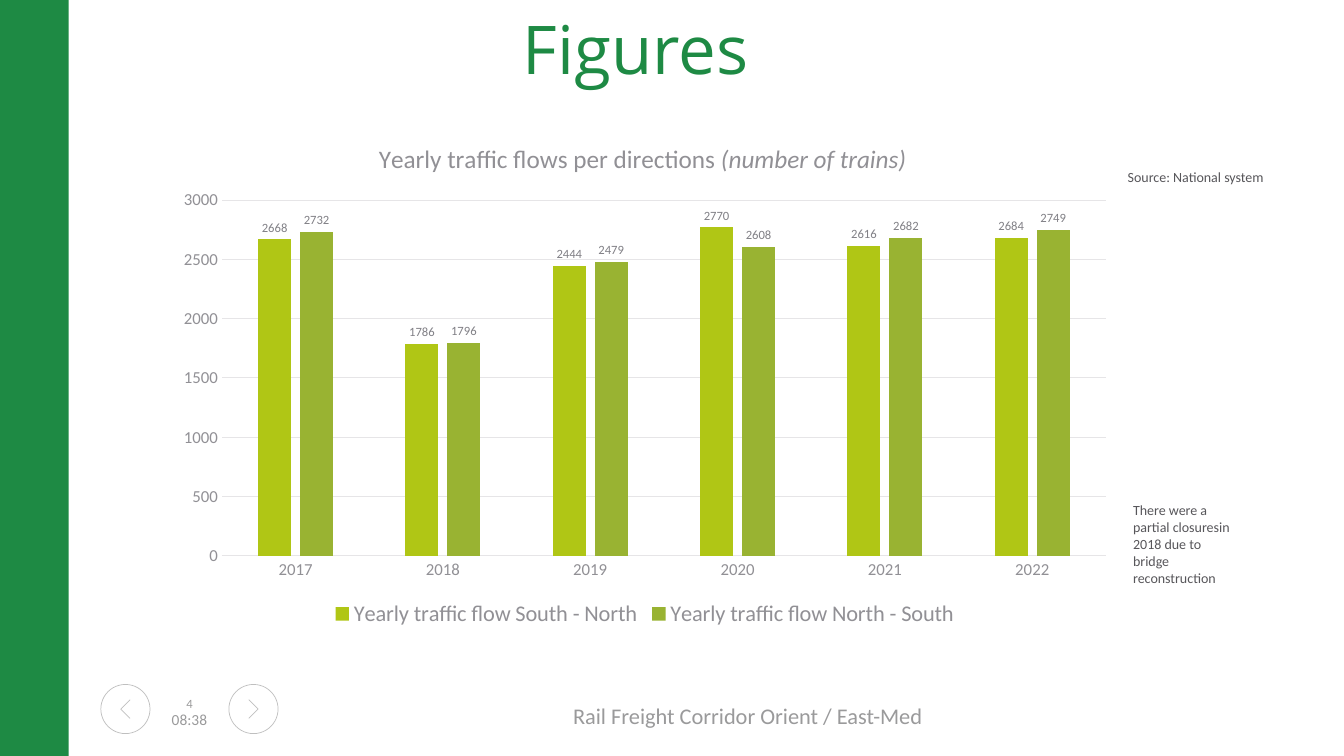
import pptx
import pptx.chart.data
import pptx.dml.color
import pptx.enum.chart
import pptx.enum.shapes
import pptx.enum.text
import pptx.oxml
import pptx.util

GREEN, GREY, INK, AXIS, GRID, OUTLINE = "1E8A44", "9A9A9B", "57565A", "919095", "E6E5E7", "BFBFBF"
Inches, Pt = pptx.util.Inches, pptx.util.Pt
ALIGN = pptx.enum.text.PP_ALIGN
ANCHOR = pptx.enum.text.MSO_ANCHOR
SHAPE = pptx.enum.shapes.MSO_SHAPE
XL = pptx.enum.chart


def rgb(value):
    return pptx.dml.color.RGBColor.from_string(value)


def set_font(font, size, color, name="Calibri"):
    font.size, font.name, font.bold = Pt(size), name, False
    font.color.rgb = rgb(color)


def set_line(line, color, width):
    line.color.rgb, line.width = rgb(color), Pt(width)


def add_text(slide, box, text, size, color, align=ALIGN.LEFT, name="Calibri",
             anchor=ANCHOR.TOP, inset=(0.1, 0.05)):
    sp = slide.shapes.add_textbox(*map(Inches, box))
    tf = sp.text_frame
    tf.word_wrap, tf.vertical_anchor = True, anchor
    tf.margin_left = tf.margin_right = Inches(inset[0])
    tf.margin_top = tf.margin_bottom = Inches(inset[1])
    p = tf.paragraphs[0]
    p.text, p.alignment = text, align
    set_font(p.font, size, color, name)


def add_sidebar(slide, box):
    sp = slide.shapes.add_shape(SHAPE.RECTANGLE, *map(Inches, box))
    sp.shadow.inherit = False
    sp.fill.solid()
    sp.fill.fore_color.rgb = rgb(GREEN)
    sp.line.fill.background()


def add_button(slide, x, y, size, direction):
    ring = slide.shapes.add_shape(SHAPE.OVAL, *map(Inches, (x, y, size, size)))
    cx, cy, reach = x + size / 2, y + size / 2, size * 0.19
    back, tip = cx - direction * reach / 2, cx + direction * reach / 2
    fb = slide.shapes.build_freeform(Inches(back), Inches(cy - reach))
    fb.add_line_segments([(Inches(tip), Inches(cy)), (Inches(back), Inches(cy + reach))], close=False)
    for sp in (ring, fb.convert_to_shape()):
        sp.shadow.inherit = False
        sp.fill.background()
        set_line(sp.line, OUTLINE, 0.5)


def add_footer(slide, x, y, w, h):
    size, step = h * 0.92, 1.27
    add_button(slide, x, y, size, -1)
    add_button(slide, x + step, y, size, 1)
    for dy, text, points in ((-0.05, "4", 9), (0.11, "08:38", 11)):
        add_text(slide, (x + size, y + dy, step - size, 0.48), text, points, GREY, ALIGN.CENTER,
                 anchor=ANCHOR.MIDDLE, inset=(0, 0.07))
    add_text(slide, (x + w - 4.55, y + 0.08, 4.55, 0.45), "Rail Freight Corridor Orient / East-Med",
             16, GREY, ALIGN.RIGHT, anchor=ANCHOR.MIDDLE, inset=(0.18, 0.09))


def set_layout(before, x, y, w=None, h=None, inner=False):
    target = '<c:layoutTarget val="inner"/>' if inner else ""
    parts = "".join(f'<c:{tag} val="{value}"/>' for tag, value in zip("xywh", (x, y, w, h)) if value)
    layout = pptx.oxml.parse_xml(
        '<c:layout xmlns:c="http://schemas.openxmlformats.org/drawingml/2006/chart"><c:manualLayout>'
        f'{target}<c:xMode val="edge"/><c:yMode val="edge"/>{parts}</c:manualLayout></c:layout>')
    parent = before.getparent()
    for old in parent.findall(layout.tag):
        parent.remove(old)
    before.addprevious(layout)


def add_title(chart):
    tf = chart.chart_title.text_frame
    p = tf.paragraphs[0]
    set_font(p.font, 18, AXIS)
    for text, italic in (("Yearly traffic flows per directions ", False), ("(number of trains)", True)):
        r = p.add_run()
        r.text = text
        set_font(r.font, 18, AXIS)
        r.font.italic = italic
    chart.chart_title.include_in_layout = False
    title = chart.chart_title._element
    set_layout(title.find("{*}overlay"), 0.22, 0.03)


def add_traffic_chart(slide, box):
    data = pptx.chart.data.CategoryChartData()
    data.categories = ["2017", "2018", "2019", "2020", "2021", "2022"]
    data.add_series("Yearly traffic flow South - North", (2668, 1786, 2444, 2770, 2616, 2684))
    data.add_series("Yearly traffic flow North - South", (2732, 1796, 2479, 2608, 2682, 2749))
    chart = slide.shapes.add_chart(XL.XL_CHART_TYPE.COLUMN_CLUSTERED, *map(Inches, box), data).chart
    set_font(chart.font, 10, INK)
    add_title(chart)

    plot = chart.plots[0]
    plot.gap_width, plot.overlap, plot.vary_by_categories = 219, -27, False
    for series, color in zip(plot.series, ("B0C615", "99B332")):
        series.format.fill.solid()
        series.format.fill.fore_color.rgb = rgb(color)
        labels = series.data_labels
        labels.show_value, labels.position = True, XL.XL_LABEL_POSITION.OUTSIDE_END
        set_font(labels.font, 9, "807F85")
    set_layout(plot._element, 0.06, 0.15, 0.92, 0.7, inner=True)

    for axis in (chart.category_axis, chart.value_axis):
        axis.major_tick_mark = axis.minor_tick_mark = XL.XL_TICK_MARK.NONE
        set_font(axis.tick_labels.font, 12, AXIS)
    set_line(chart.category_axis.format.line, GRID, 0.75)
    values = chart.value_axis
    values.minimum_scale, values.maximum_scale, values.major_unit = 0, 3000, 500
    values.format.line.fill.background()
    set_line(values.major_gridlines.format.line, GRID, 0.75)

    chart.has_legend = True
    chart.legend.position = XL.XL_LEGEND_POSITION.BOTTOM
    chart.legend.include_in_layout = False
    set_font(chart.legend.font, 16, AXIS)


def add_notes_column(slide, x, y, w, h):
    add_text(slide, (x, y, w, 0.27), "Source: National system", 10, INK, ALIGN.RIGHT)
    add_text(slide, (x + 0.22, y + h - 0.94, 1.26, 0.94),
             "There were a partial closuresin 2018 due to bridge reconstruction", 10, INK)


def main():
    prs = pptx.Presentation()
    prs.slide_width, prs.slide_height = Inches(13.33), Inches(7.5)
    slide = prs.slides.add_slide(prs.slide_layouts[6])
    add_sidebar(slide, (0, 0, 0.68, 7.5))
    add_footer(slide, 1, 6.79, 8.33, 0.53)
    add_text(slide, (4.93, 0, 2.75, 0.55), "Figures", 48, GREEN, ALIGN.CENTER, "Open Sans", inset=(0.13, 0.07))
    add_notes_column(slide, 10.92, 1.62, 1.71, 4.25)
    add_traffic_chart(slide, (1.63, 1.23, 9.53, 5.04))
    prs.save("out.pptx")


if __name__ == "__main__":
    main()
